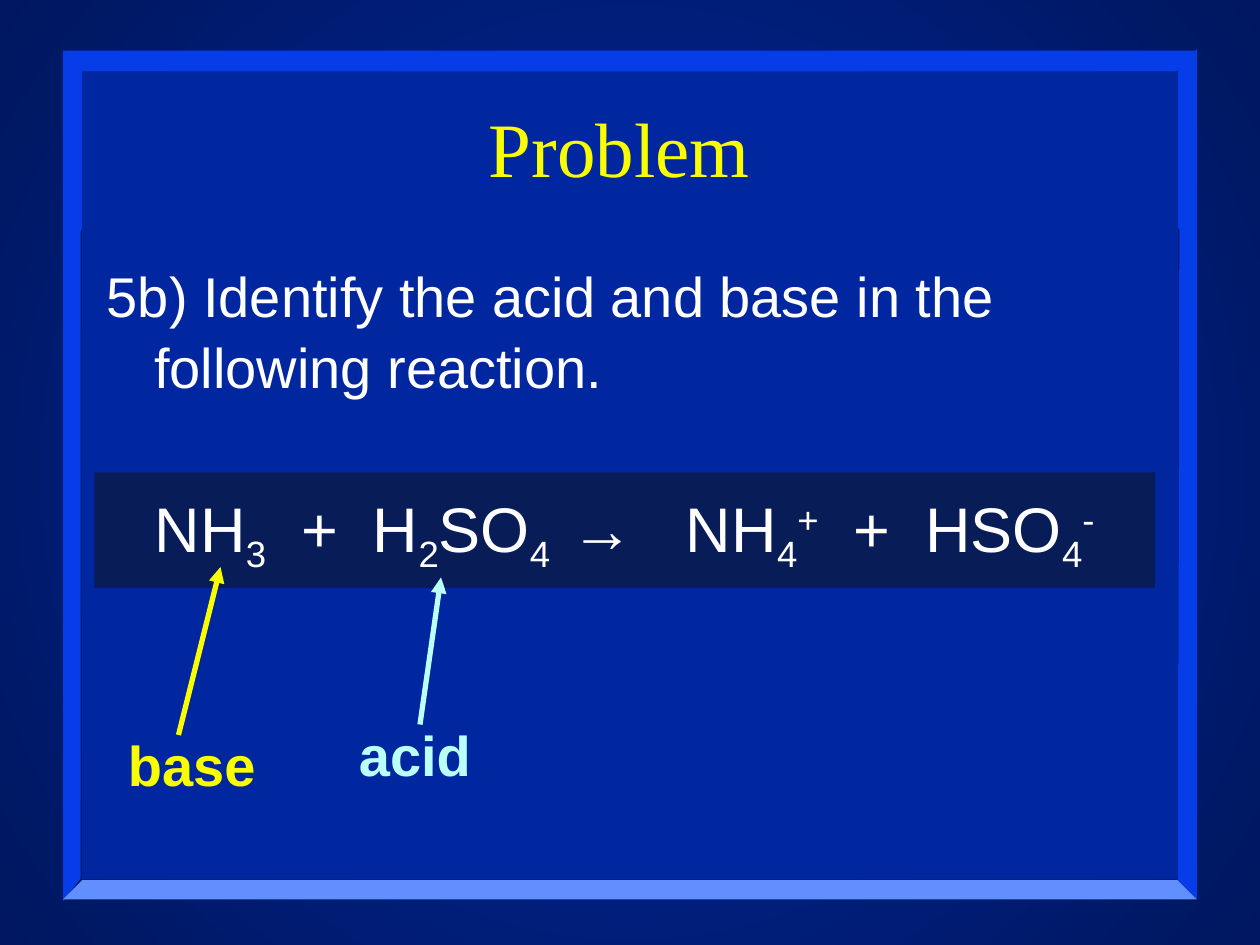
from dataclasses import dataclass

from lxml import etree
from pptx import Presentation
from pptx import util as u
from pptx.dml import color
from pptx.enum import shapes, text
from pptx.oxml import ns

Pt = u.Pt
NAVY, ROYAL, SKY, BAND = "00279F", "063DE8", "618FFD", "081D58"
YELLOW, AQUA, WHITE = "FAFD00", "BAFFF8", "FFFFFF"
SANS, SERIF = "Arial", "Times New Roman"
SUB, SUPER = -25, 30


@dataclass
class Box:
    left: float
    top: float
    width: float
    height: float


@dataclass
class Bevel:
    points: list[tuple[float, float]]
    fill: str


@dataclass
class Piece:
    wording: str
    baseline: int = 0
    font: str = SANS


@dataclass
class Label:
    wording: str
    box: Box
    color: str
    start: tuple[float, float]
    end: tuple[float, float]


BEVELS = [
    Bevel([(36, 28.8), (46.8, 41), (46.8, 131), (36, 142.6)], ROYAL),
    Bevel([(684, 28.1), (673.2, 39.6), (673.2, 129.6), (684, 141.8)], ROYAL),
    Bevel([(36, 28.8), (684, 28.8), (672.5, 41), (46.8, 41)], ROYAL),
    Bevel([(36, 105.8), (46, 118.8), (46, 502), (36, 514.8)], ROYAL),
    Bevel([(683.6, 98), (673.6, 111.6), (673.2, 502.6), (683.6, 514)], ROYAL),
    Bevel([(36, 514), (684, 514), (673.2, 502.6), (46.8, 502.6)], SKY),
]
EQUATION = [
    Piece("NH"), Piece("3", SUB), Piece("  +  H"), Piece("2", SUB),
    Piece("SO"), Piece("4  ", SUB), Piece("→", font=SERIF), Piece("   NH"),
    Piece("4", SUB), Piece("+", SUPER), Piece("  +  HSO"),
    Piece("4", SUB), Piece("-", SUPER),
]
LABELS = [
    Label("acid", Box(198, 408, 84, 45.4), AQUA, (240, 414), (252, 330)),
    Label("base", Box(66, 414, 90, 45.4), YELLOW, (102, 420), (126, 324)),
]


def rgb(hex_color: str) -> color.RGBColor:
    return color.RGBColor.from_string(hex_color)


def lengths(box: Box) -> tuple:
    return Pt(box.left), Pt(box.top), Pt(box.width), Pt(box.height)


def paint_background(slide) -> None:
    fill = slide.background.fill
    fill.gradient()
    for stop, shade in zip(fill.gradient_stops, (NAVY, "00175F")):
        stop.color.rgb = rgb(shade)
    gradient = next(slide.element.iter(ns.qn("a:gradFill")))
    gradient.remove(gradient.find(ns.qn("a:lin")))
    radial = etree.SubElement(gradient, ns.qn("a:path"), path="circle")
    etree.SubElement(radial, ns.qn("a:fillToRect"),
                     l="50000", t="50000", r="50000", b="50000")


def paint(shape, fill: str) -> None:
    shape.shadow.inherit = False
    shape.fill.solid()
    shape.fill.fore_color.rgb = rgb(fill)
    shape.line.fill.background()


def draw_bevel(slide, bevel: Bevel) -> None:
    start, *rest = bevel.points
    builder = slide.shapes.build_freeform(*start, scale=Pt(1))
    builder.add_line_segments(rest, close=True)
    paint(builder.convert_to_shape(), bevel.fill)


def draw_rectangle(slide, box: Box, fill: str) -> None:
    paint(slide.shapes.add_shape(shapes.MSO_SHAPE.RECTANGLE, *lengths(box)), fill)


def write(frame, pieces: list[Piece], size: float, shade: str,
          align=text.PP_ALIGN.LEFT, bold: bool = False):
    frame.word_wrap = True
    paragraph = frame.paragraphs[0]
    paragraph.alignment = align
    for piece in pieces:
        run = paragraph.add_run()
        run.text = piece.wording
        run.font.name = piece.font
        run.font.size = Pt(size)
        run.font.bold = bold
        run.font.color.rgb = rgb(shade)
        if piece.baseline:
            run.font._element.set("baseline", str(piece.baseline * 1000))
    return paragraph


def add_text(slide, box: Box, *args, **options):
    frame = slide.shapes.add_textbox(*lengths(box)).text_frame
    return write(frame, *args, **options)


def draw_arrow(slide, label: Label) -> None:
    ends = [Pt(value) for value in label.start + label.end]
    arrow = slide.shapes.add_connector(shapes.MSO_CONNECTOR.STRAIGHT, *ends)
    arrow.line.color.rgb = rgb(label.color)
    arrow.line.width = Pt(3)
    properties = arrow.element.spPr
    etree.SubElement(properties.find(ns.qn("a:ln")), ns.qn("a:tailEnd"), type="triangle")
    etree.SubElement(properties, ns.qn("a:effectLst"))


def main() -> None:
    deck = Presentation()
    deck.slide_width, deck.slide_height = Pt(720), Pt(540)
    slide = deck.slides.add_slide(deck.slide_layouts[5])
    paint_background(slide)

    for bevel in BEVELS:
        draw_bevel(slide, bevel)
    draw_rectangle(slide, Box(46.8, 41, 626.4, 461.6), NAVY)

    title = slide.shapes.title
    slide.shapes.element.append(title.element)
    title.left, title.top, title.width, title.height = lengths(Box(48, 54, 612, 60))
    title.text_frame.vertical_anchor = text.MSO_ANCHOR.MIDDLE
    write(title.text_frame, [Piece("Problem", font=SERIF)], 44, YELLOW,
          text.PP_ALIGN.CENTER)

    question = add_text(
        slide, Box(54, 144, 612, 270),
        [Piece("5b) Identify the acid and base in the following reaction.")], 32, WHITE)
    question.line_spacing = 1.05
    indents = question._p.get_or_add_pPr()
    indents.set("marL", str(Pt(27)))
    indents.set("indent", str(-Pt(27)))

    for label in LABELS:
        add_text(slide, label.box, [Piece(label.wording)], 32, label.color, bold=True)
    draw_rectangle(slide, Box(54, 270, 606, 66), BAND)
    add_text(slide, Box(60, 276, 594, 50.4), EQUATION, 36, WHITE, text.PP_ALIGN.CENTER)
    for label in reversed(LABELS):
        draw_arrow(slide, label)

    deck.save("out.pptx")


if __name__ == "__main__":
    main()
